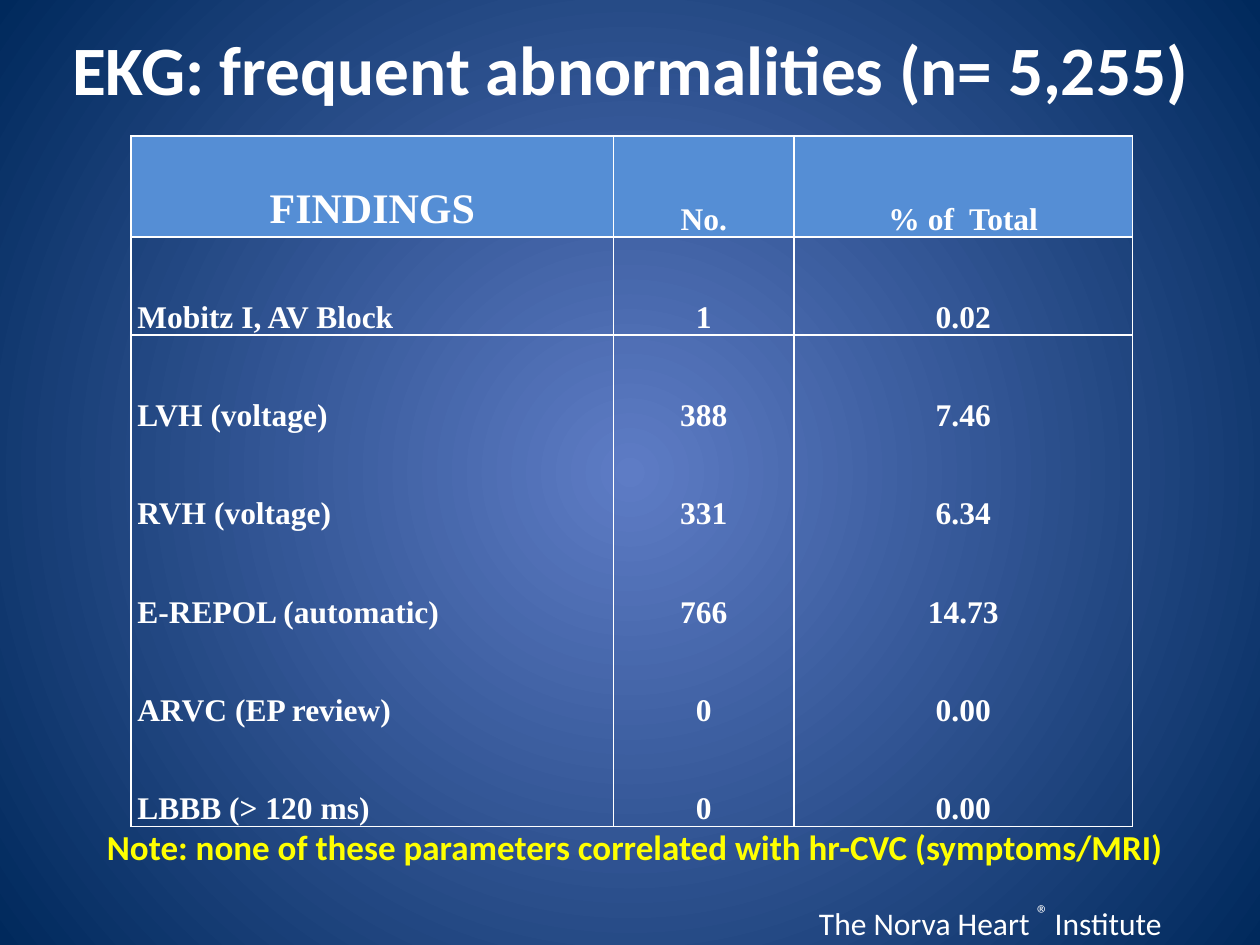
from pptx import Presentation
from pptx.dml.color import RGBColor
from pptx.enum.text import MSO_ANCHOR, PP_ALIGN
from pptx.oxml import parse_xml
from pptx.oxml.ns import nsdecls, qn
from pptx.util import Inches, Pt

WHITE = RGBColor(0xFF, 0xFF, 0xFF)
YELLOW = RGBColor(0xFF, 0xFF, 0x00)
HEADER_BLUE = RGBColor(0x55, 0x8E, 0xD5)
GLOW_BLUE = RGBColor(0x5E, 0x7C, 0xC5)
NAVY = RGBColor(0x00, 0x29, 0x5C)
LEFT, CENTER = PP_ALIGN.LEFT, PP_ALIGN.CENTER
TOP, MIDDLE, BOTTOM = MSO_ANCHOR.TOP, MSO_ANCHOR.MIDDLE, MSO_ANCHOR.BOTTOM
NO_TABLE_STYLE = "{2D5ABB26-0587-4C30-8999-92F81FD0307C}"

FINDINGS = [
    ("FINDINGS", "No.", "% of  Total"),
    ("Mobitz I, AV Block", "1", "0.02"),
    ("LVH (voltage)", "388", "7.46"),
    ("RVH (voltage)", "331", "6.34"),
    ("E-REPOL (automatic)", "766", "14.73"),
    ("ARVC (EP review)", "0", "0.00"),
    ("LBBB (> 120 ms)", "0", "0.00"),
]
COLUMN_WIDTHS = (3.83, 1.43, 2.69)
HEADER_HEIGHT, ROW_HEIGHT = 0.78, 0.78


def add_run(paragraph, text, size=18, font="Calibri", color=WHITE,
            bold=False, raised=False):
    run = paragraph.add_run()
    run.text = text
    run.font.size = Pt(size)
    run.font.name = font
    run.font.color.rgb = color
    run.font.bold = bold
    if raised:
        run.font._element.set("baseline", "30000")


class SlideBuilder:
    table_font = "Times New Roman"
    border_width = Pt(1)

    def __init__(self, slide):
        self.slide = slide

    def background(self, inner, outer):
        fill = self.slide.background.fill
        fill.gradient()
        for stop, color, position in zip(fill.gradient_stops, (inner, outer), (0, 1)):
            stop.color.rgb = color
            stop.position = position
        gradient = next(self.slide.element.iter(qn("a:gradFill")))
        gradient.replace(gradient.find(qn("a:lin")), parse_xml(
            f'<a:path {nsdecls("a")} path="circle">'
            '<a:fillToRect l="50000" t="50000" r="50000" b="50000"/></a:path>'))

    def text(self, left, top, width, height, runs, align=LEFT, anchor=TOP, inset=0.1):
        box = self.slide.shapes.add_textbox(
            Inches(left), Inches(top), Inches(width), Inches(height))
        frame = box.text_frame
        frame.word_wrap = True
        frame.vertical_anchor = anchor
        frame.margin_left = Inches(inset)
        paragraph = frame.paragraphs[0]
        paragraph.alignment = align
        for content, style in runs:
            add_run(paragraph, content, **style)

    def borders(self, cell, sides):
        properties = cell._tc.get_or_add_tcPr()
        for index, side in enumerate(sides):
            properties.insert(index, parse_xml(
                f'<a:ln{side} {nsdecls("a")} w="{self.border_width}"><a:solidFill>'
                f'<a:srgbClr val="{WHITE}"/></a:solidFill></a:ln{side}>'))

    def cell(self, cell, text, size, align, anchor):
        cell.margin_left = cell.margin_right = Inches(0.05)
        cell.margin_top = cell.margin_bottom = 0
        cell.vertical_anchor = anchor
        paragraph = cell.text_frame.paragraphs[0]
        paragraph.alignment = align
        paragraph.line_spacing = 2.0
        add_run(paragraph, text, size=size, font=self.table_font, bold=True)

    def table(self, left, top, widths, rows):
        height = HEADER_HEIGHT + ROW_HEIGHT * (len(rows) - 1)
        frame = self.slide.shapes.add_table(
            len(rows), len(widths), Inches(left), Inches(top),
            Inches(sum(widths)), Inches(height))
        table = frame.table
        table.first_row = table.horz_banding = False
        next(frame.element.iter(qn("a:tableStyleId"))).text = NO_TABLE_STYLE
        for column, width in zip(table.columns, widths):
            column.width = Inches(width)
        for r, row in enumerate(rows):
            header, last = r == 0, r == len(rows) - 1
            table.rows[r].height = Inches(HEADER_HEIGHT if header else ROW_HEIGHT)
            sides = "LRTB" if header else "LRT" if r == 1 else "LRB" if last else "LR"
            for c, text in enumerate(row):
                cell = table.cell(r, c)
                corner = header and c == 0
                self.cell(cell, text, 24 if corner else 18,
                          CENTER if header or c else LEFT,
                          MIDDLE if corner else BOTTOM)
                if header:
                    cell.fill.solid()
                    cell.fill.fore_color.rgb = HEADER_BLUE
                else:
                    cell.fill.background()
                self.borders(cell, sides)


def main():
    deck = Presentation()
    deck.slide_width, deck.slide_height = Inches(10), Inches(7.5)
    builder = SlideBuilder(deck.slides.add_slide(deck.slide_layouts[6]))
    builder.background(GLOW_BLUE, NAVY)

    # Title
    builder.text(0.42, 0.08, 9.17, 0.92,
                 [("EKG: frequent abnormalities (n= 5,255)", {"size": 39.6, "bold": True})],
                 align=CENTER, anchor=MIDDLE)

    # Findings table
    builder.table(1.04, 1.08, COLUMN_WIDTHS, FINDINGS)

    # Note and institute
    builder.text(0.75, 6.5, 8.75, 0.44,
                 [("Note: none of these parameters correlated with hr-CVC (symptoms/MRI)",
                   {"size": 20, "color": YELLOW, "bold": True})])
    builder.text(5.5, 7.04, 4, 0.5,
                 [("The Norva Heart ", {}),
                  ("® ", {"size": 24, "raised": True}),
                  ("Institute", {})], inset=1)

    deck.save("out.pptx")


if __name__ == "__main__":
    main()
